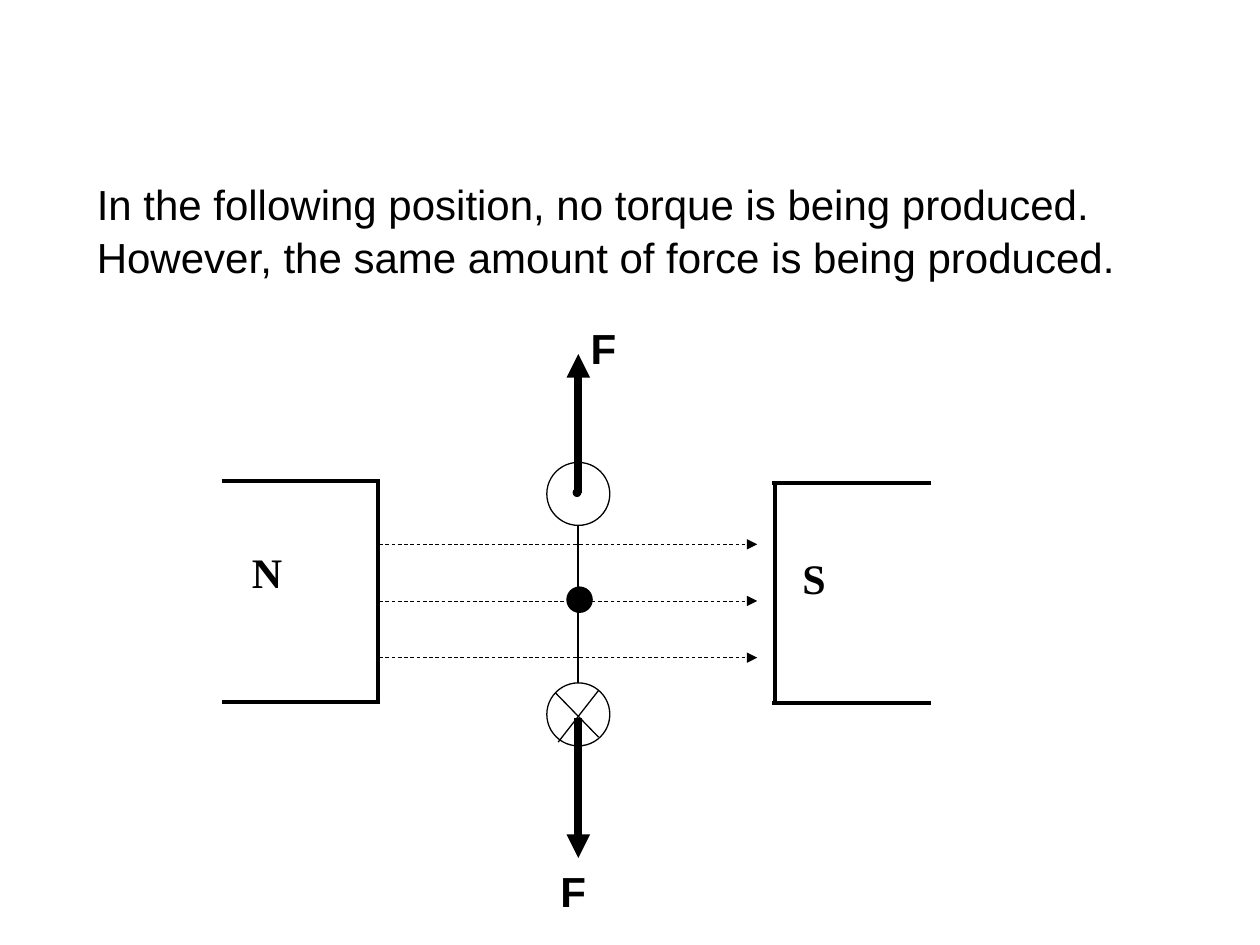
from lxml.etree import SubElement
from pptx import Presentation
from pptx.dml.color import RGBColor
from pptx.enum.dml import MSO_LINE
from pptx.enum.shapes import MSO_CONNECTOR, MSO_SHAPE
from pptx.oxml.ns import qn
from pptx.util import Inches, Pt

prs = Presentation()
prs.slide_width, prs.slide_height = Inches(10), Inches(7.5)
s = prs.slides.add_slide(prs.slide_layouts[6])
BLACK, WHITE = "000000", "FFFFFF"


def add_text(text, x, y, w, h, font="Arial", size=24, bold=False, color=BLACK):
    tf = s.shapes.add_textbox(Inches(x), Inches(y), Inches(w), Inches(h)).text_frame
    tf.word_wrap = True
    p = tf.paragraphs[0]
    p.line_spacing = 1.05
    r = p.add_run()
    r.text = text
    r.font.name, r.font.size, r.font.bold = font, Pt(size), bold
    r.font.color.rgb = RGBColor.from_string(color)


def add_line(x1, y1, x2, y2, width, arrow=False, dashed=False, color=BLACK):
    c = s.shapes.add_connector(MSO_CONNECTOR.STRAIGHT, Inches(x1), Inches(y1),
                               Inches(x2), Inches(y2))
    c.line.color.rgb = RGBColor.from_string(color)
    c.line.width = Pt(width)
    if dashed:
        c.line.dash_style = MSO_LINE.DASH
    if arrow:
        SubElement(c.line._get_or_add_ln(), qn("a:tailEnd"), type="triangle")
    SubElement(c._element.spPr, qn("a:effectLst"))


# Magnet poles: top edge, face and bottom edge, open on the outer side
for name, face, outer, top, text_x, text_y in [
    ("N", 3.0, 1.76, 3.82, 1.9, 4.27),
    ("S", 6.15, 7.39, 3.83, 6.27, 4.32),
]:
    bottom = top + 1.75
    corner = face + (0.02 if outer < face else -0.02)
    add_line(outer, top, corner, top, 2.25)
    add_line(face, top, face, bottom, 2.25)
    add_line(corner, bottom, outer, bottom, 2.25)
    add_text(name, text_x, text_y, 1.25, 1, font="Times New Roman", bold=True)

# Coil seen from the end: axle, arm, two conductors, current-out dot
axis = 4.59
for x, y, d, fill in [
    (4.5, 4.66, 0.2, BLACK),
    (4.34, 3.67, 0.5, WHITE),
    (4.34, 5.42, 0.5, WHITE),
    (4.55, 3.88, 0.06, BLACK),
]:
    sp = s.shapes.add_shape(MSO_SHAPE.OVAL, Inches(x), Inches(y), Inches(d), Inches(d))
    sp.shadow.inherit = False
    sp.fill.solid()
    sp.fill.fore_color.rgb = RGBColor.from_string(fill)
    sp.line.color.rgb = RGBColor.from_string(BLACK)
    sp.line.width = Pt(0.75)
add_line(axis, 4.17, axis, 5.42, 1)

# Current-in cross
add_line(4.75, 5.85, 4.41, 5.5, 0.75)
add_line(4.75, 5.48, 4.43, 5.89, 0.75)

# Magnetic field
for i in range(3):
    y = 4.32 + 0.45 * i
    add_line(3.01, y, 6.01, y, 0.5, arrow=True, dashed=True)

# Statement
add_text("In the following position, no torque is being produced. "
         "However, the same amount of force is being produced.", 0.67, 1.35, 9.06, 1.3)

# Forces
for start, end, text_x, text_y in [(3.91, 2.81, 4.59, 2.49), (5.7, 6.81, 4.35, 6.8)]:
    add_line(axis, start, axis, end, 4.5, arrow=True)
    add_text("F", text_x, text_y, 0.63, 0.4, bold=True)

prs.save("out.pptx")
